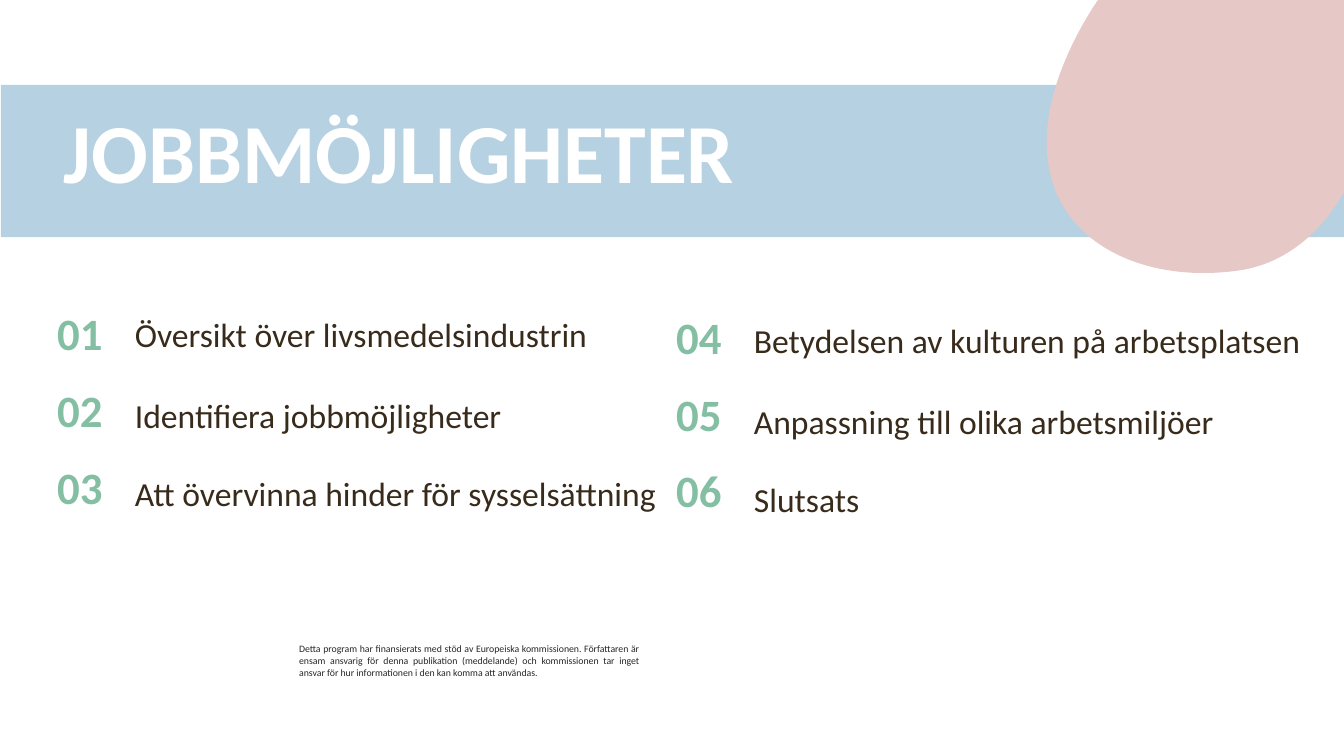
from dataclasses import dataclass

import lxml.etree
import pptx
import pptx.enum.shapes
import pptx.enum.text
import pptx.oxml.ns
import pptx.shapes.autoshape
import pptx.slide
import pptx.util
from pptx.dml.color import RGBColor
from pptx.util import Cm

WHITE = RGBColor(0xFF, 0xFF, 0xFF)
BLUE = RGBColor(0xB6, 0xD1, 0xE1)
PINK = RGBColor(0xE6, 0xC8, 0xC7)
GREEN = RGBColor(0x84, 0xBF, 0xA4)
BROWN = RGBColor(0x38, 0x2B, 0x1B)
GREY = RGBColor(0x26, 0x26, 0x26)

FONT = "Calibri"
ROW_HEIGHT = 1.91
NUMBER_WIDTH = 1.96
NUMBER_PITCH = 1.93
TOPIC_PITCH = 1.96

Point = tuple[float, float]


@dataclass(frozen=True)
class Style:
    size: float
    color: RGBColor
    bold: bool = False
    line_spacing: float | pptx.util.Length = 1.0
    space_after: float = 0
    align: pptx.enum.text.PP_ALIGN = pptx.enum.text.PP_ALIGN.LEFT
    anchor: pptx.enum.text.MSO_ANCHOR = pptx.enum.text.MSO_ANCHOR.TOP


@dataclass(frozen=True)
class Topic:
    title: str
    width: float


@dataclass(frozen=True)
class Column:
    left: float
    number_top: float
    topic_top: float
    first_number: int
    topics: tuple[Topic, ...]


MIDDLE = pptx.enum.text.MSO_ANCHOR.MIDDLE
TITLE = Style(60, WHITE, bold=True, line_spacing=pptx.util.Pt(46))
NUMBER = Style(32, GREEN, bold=True, line_spacing=0.9, anchor=MIDDLE)
FIRST_TOPIC = Style(24, BROWN, line_spacing=0.9, anchor=MIDDLE)
NEXT_TOPIC = Style(24, BROWN, line_spacing=1.07, space_after=8, anchor=MIDDLE)
DISCLAIMER = Style(7, GREY, align=pptx.enum.text.PP_ALIGN.JUSTIFY)

COLUMNS = (
    Column(1.19, 7.52, 7.52, 1, (
        Topic("Översikt över livsmedelsindustrin", 13.34),
        Topic("Identifiera jobbmöjligheter", 13.34),
        Topic("Att övervinna hinder för sysselsättning", 16.13),
    )),
    Column(16.79, 7.62, 7.67, 4, (
        Topic("Betydelsen av kulturen på arbetsplatsen", 14.27),
        Topic("Anpassning till olika arbetsmiljöer", 15.8),
        Topic("Slutsats", 13.34),
    )),
)

BLOB_LEFT, BLOB_TOP, BLOB_WIDTH, BLOB_HEIGHT = 26.39, -1.57, 8.18, 8.43
BLOB_START: Point = (31.34, -1.37)
BLOB_CURVES: tuple[tuple[Point, Point, Point], ...] = (
    ((30.25, -1.7), (29.11, -1.7), (28.24, -0.74)),
    ((27.41, 0.2), (26.59, 1.73), (26.42, 3.0)),
    ((26.01, 5.92), (28.63, 7.21), (31.27, 6.81)),
    ((33.83, 6.4), (35.13, 3.02), (34.34, 0.61)),
    ((34.11, -0.13), (33.43, -0.46), (32.79, -0.76)),
    ((32.33, -0.99), (31.85, -1.22), BLOB_START),
)


def add_text(slide: pptx.slide.Slide, text: str, left: float, top: float,
             width: float, height: float, style: Style) -> None:
    box = slide.shapes.add_textbox(Cm(left), Cm(top), Cm(width), Cm(height))
    frame = box.text_frame
    frame.word_wrap = True
    frame.vertical_anchor = style.anchor
    paragraph = frame.paragraphs[0]
    paragraph.text = text
    paragraph.alignment = style.align
    paragraph.line_spacing = style.line_spacing
    paragraph.space_after = pptx.util.Pt(style.space_after)
    paragraph.font.name = FONT
    paragraph.font.size = pptx.util.Pt(style.size)
    paragraph.font.bold = style.bold
    paragraph.font.color.rgb = style.color


def paint(shape: pptx.shapes.autoshape.Shape, color: RGBColor) -> None:
    shape.shadow.inherit = False
    shape.fill.solid()
    shape.fill.fore_color.rgb = color
    shape.line.fill.background()


def add_blob(slide: pptx.slide.Slide) -> None:
    qn = pptx.oxml.ns.qn
    builder = slide.shapes.build_freeform(*BLOB_START, scale=float(Cm(1)))
    builder.add_line_segments([curve[-1] for curve in BLOB_CURVES], close=True)
    blob = builder.convert_to_shape()
    blob.left, blob.top = Cm(BLOB_LEFT), Cm(BLOB_TOP)
    blob.width, blob.height = Cm(BLOB_WIDTH), Cm(BLOB_HEIGHT)
    outline = next(blob.element.iter(qn("a:path")))
    for segment in list(outline):
        outline.remove(segment)
    outline.set("w", str(Cm(BLOB_WIDTH)))
    outline.set("h", str(Cm(BLOB_HEIGHT)))
    segments = [("a:moveTo", (BLOB_START,))]
    segments += [("a:cubicBezTo", curve) for curve in BLOB_CURVES]
    for tag, points in segments:
        segment = lxml.etree.SubElement(outline, qn(tag))
        for x, y in points:
            lxml.etree.SubElement(segment, qn("a:pt"), x=str(Cm(x - BLOB_LEFT)),
                                  y=str(Cm(y - BLOB_TOP)))
    lxml.etree.SubElement(outline, qn("a:close"))
    paint(blob, PINK)


def add_column(slide: pptx.slide.Slide, column: Column) -> None:
    for row, topic in enumerate(column.topics):
        add_text(slide, f"{column.first_number + row:02d}", column.left,
                 column.number_top + row * NUMBER_PITCH,
                 NUMBER_WIDTH, ROW_HEIGHT, NUMBER)
        add_text(slide, topic.title, column.left + NUMBER_WIDTH,
                 column.topic_top + row * TOPIC_PITCH,
                 topic.width, ROW_HEIGHT, NEXT_TOPIC if row else FIRST_TOPIC)


def main() -> None:
    presentation = pptx.Presentation()
    presentation.slide_width = Cm(33.87)
    presentation.slide_height = Cm(19.05)
    slide = presentation.slides.add_slide(presentation.slide_layouts[6])
    slide.background.fill.solid()
    slide.background.fill.fore_color.rgb = WHITE

    title_band = slide.shapes.add_shape(
        pptx.enum.shapes.MSO_SHAPE.RECTANGLE, Cm(0.02), Cm(2.14), Cm(33.85), Cm(3.84))
    paint(title_band, BLUE)
    add_text(slide, "JOBBMÖJLIGHETER", 1.35, 3.3, 23.75, 1.93, TITLE)
    for column in COLUMNS:
        add_column(slide, column)
    add_blob(slide)
    add_text(
        slide,
        "Detta program har finansierats med stöd av Europeiska kommissionen. "
        "Författaren är ensam ansvarig för denna publikation (meddelande) och "
        "kommissionen tar inget ansvar för hur informationen i den kan komma "
        "att användas.",
        7.29, 16.08, 9.07, 1.22, DISCLAIMER)
    presentation.save("out.pptx")


if __name__ == "__main__":
    main()
